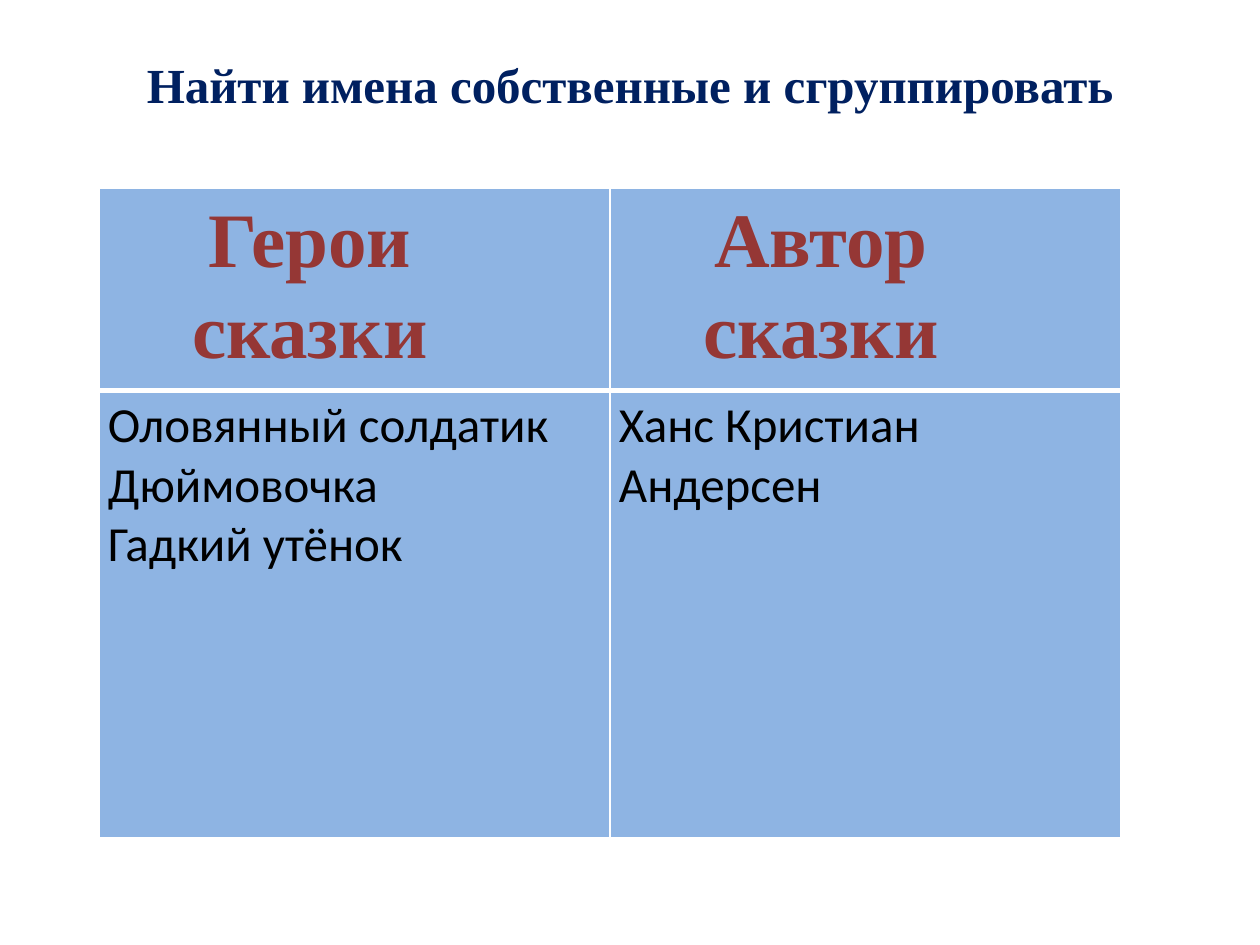
"""Build a slide that groups fairy-tale heroes and their author in a table."""
from lxml.etree import SubElement
from pptx import Presentation
from pptx.dml.color import RGBColor
from pptx.enum.text import MSO_ANCHOR, PP_ALIGN
from pptx.oxml.ns import qn
from pptx.util import Emu, Pt

COLORS = {
    "title": "002060",
    "heading": "953735",
    "body": "000000",
    "cell": "8EB4E3",
    "border": "FFFFFF",
}
SERIF, SANS = "Times New Roman", "Calibri"
HEADINGS = ["Герои сказки", "Автор сказки"]
ENTRIES = [
    ["Оловянный солдатик", "Дюймовочка", "Гадкий утёнок"],
    ["Ханс Кристиан Андерсен"],
]


def px(length):
    return Emu(round(length * 914400 / 126))


def write(para, text, font=SANS, size=28, color="body", bold=False,
          align=PP_ALIGN.LEFT, spacing=1.0):
    para.alignment = align
    para.line_spacing = spacing
    span = para.add_run()
    span.text = text
    span.font.name = font
    span.font.size = Pt(size)
    span.font.bold = bold
    span.font.color.rgb = RGBColor.from_string(COLORS[color])


class SlideBuilder:
    def __init__(self, deck):
        self.page = deck.slides.add_slide(deck.slide_layouts[6])

    def title(self, text, left, top, width, height):
        box = self.page.shapes.add_textbox(px(left), px(top), px(width), px(height))
        frame = box.text_frame
        frame.word_wrap = True
        frame.vertical_anchor = MSO_ANCHOR.MIDDLE
        write(frame.paragraphs[0], text, font=SERIF, color="title", bold=True,
              align=PP_ALIGN.CENTER)

    def border(self, cell, side, points):
        line = SubElement(cell._tc.get_or_add_tcPr(), qn(f"a:ln{side}"), w=str(Pt(points)))
        fill = SubElement(line, qn("a:solidFill"))
        SubElement(fill, qn("a:srgbClr"), val=COLORS["border"])

    def cell(self, cell, lines, borders, margin_right=10, **style):
        cell.margin_left, cell.margin_right = px(9), px(margin_right)
        cell.margin_top, cell.margin_bottom = px(5), px(0)
        for side, points in borders.items():
            self.border(cell, side, points)
        cell.fill.solid()
        cell.fill.fore_color.rgb = RGBColor.from_string(COLORS["cell"])
        frame = cell.text_frame
        for index, text in enumerate(lines):
            para = frame.add_paragraph() if index else frame.paragraphs[0]
            write(para, text, **style)

    def table(self, headings, entries, left, top, width, row_heights):
        shape = self.page.shapes.add_table(len(row_heights), len(headings), px(left),
                                           px(top), px(width), px(sum(row_heights)))
        table = shape.table
        table.first_row = table.horz_banding = False
        for row, height in zip(table.rows, row_heights):
            row.height = px(height)
        for column, (heading, lines) in enumerate(zip(headings, entries)):
            self.cell(table.cell(0, column), [heading], {"L": 1, "R": 1, "T": 1, "B": 3},
                      margin_right=98, font=SERIF, size=44, color="heading", bold=True,
                      align=PP_ALIGN.CENTER, spacing=1.07)
            self.cell(table.cell(1, column), lines, {"L": 1, "R": 1, "T": 3, "B": 1})


def main():
    deck = Presentation()
    deck.slide_width, deck.slide_height = px(1260), px(945)
    slide = SlideBuilder(deck)
    slide.title("Найти имена собственные и сгруппировать", 63, 38, 1134, 91)
    slide.table(HEADINGS, ENTRIES, 99, 188, 1022, [187, 447])
    deck.save("out.pptx")


if __name__ == "__main__":
    main()
